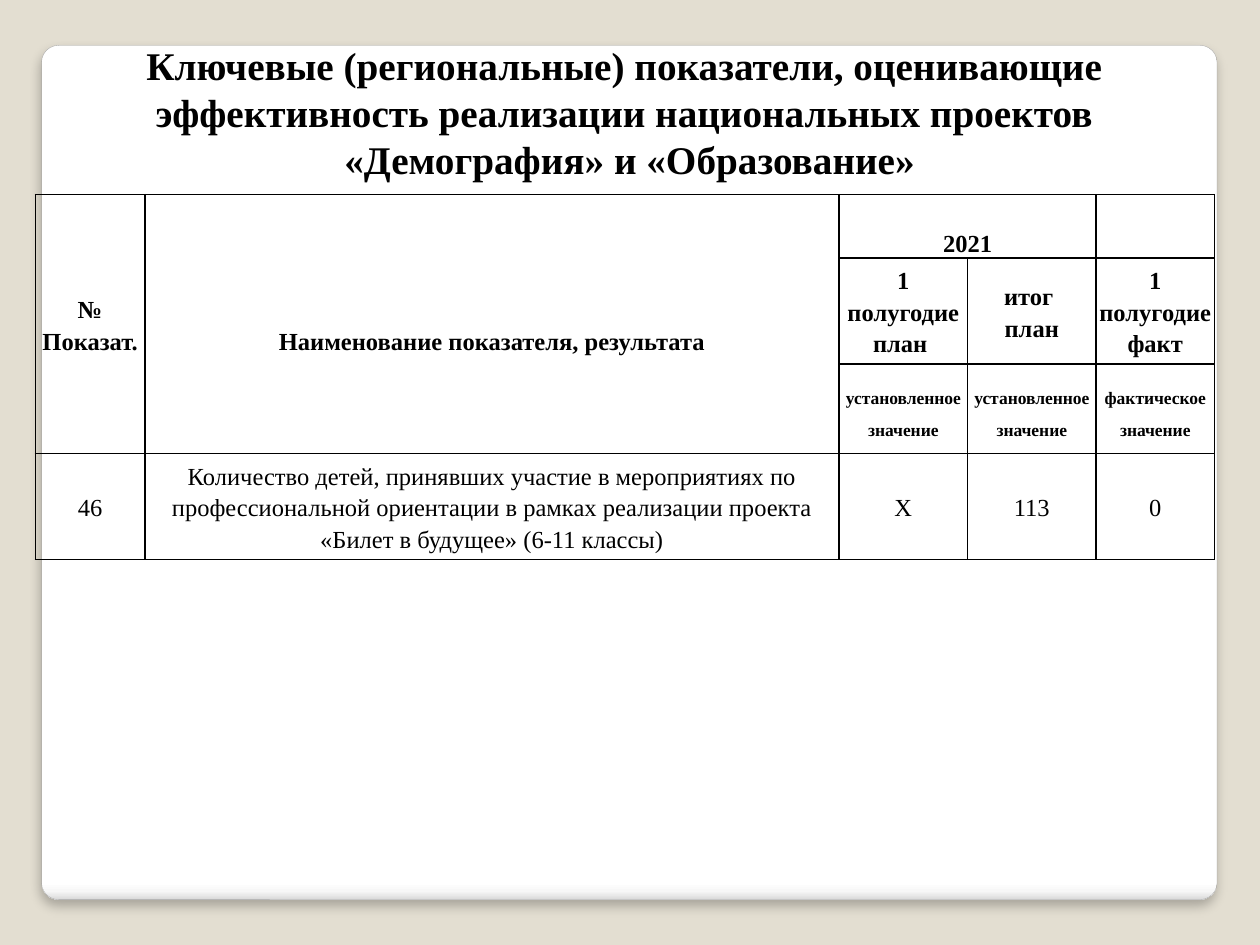
from lxml import etree
from pptx import Presentation
from pptx.dml.color import RGBColor
from pptx.enum.shapes import MSO_SHAPE
from pptx.enum.text import MSO_ANCHOR, PP_ALIGN
from pptx.oxml import parse_xml
from pptx.oxml.ns import qn
from pptx.util import Inches, Pt

ROUND = MSO_SHAPE.ROUNDED_RECTANGLE
CENTER = PP_ALIGN.CENTER
TOP, MIDDLE, BOTTOM = MSO_ANCHOR.TOP, MSO_ANCHOR.MIDDLE, MSO_ANCHOR.BOTTOM
SPACE = 'xmlns:a="http://schemas.openxmlformats.org/drawingml/2006/main"'

THEME = {
    "font": "Times New Roman",
    "back": "E3DED1",
    "ink": "000000",
    "edge": "A4A4A4",
    "fade": [(0, "FFFFFF"), (98, "FFFFFF"), (99, "F7F7F7"), (100, "DADADA")],
    "title": 22.4,
    "body": 14,
    "small": 10,
    "line": 18,
}


def add_run(para, text, size, bold):
    para.alignment = CENTER
    run = para.add_run()
    run.text = text
    run.font.name = THEME["font"]
    run.font.size = Pt(size)
    run.font.bold = bold
    run.font.color.rgb = RGBColor.from_string(THEME["ink"])


def add_edges(cell):
    props = cell._tc.get_or_add_tcPr()
    for spot, side in enumerate(("lnL", "lnR", "lnT", "lnB")):
        props.insert(spot, parse_xml(
            f'<a:{side} {SPACE} w="12700"><a:solidFill>'
            f'<a:srgbClr val="{THEME["ink"]}"/></a:solidFill></a:{side}>'))


deck = Presentation()
deck.slide_width, deck.slide_height = Inches(10), Inches(7.5)
wide, high = deck.slide_width, deck.slide_height
slide = deck.slides.add_slide(deck.slide_layouts[6])
slide.background.fill.solid()
slide.background.fill.fore_color.rgb = RGBColor.from_string(THEME["back"])

panel = slide.shapes.add_shape(
    ROUND, int(wide * 0.033), int(high * 0.048), int(wide * 0.933), int(high * 0.904))
panel.adjustments[0] = 0.02
panel.line.color.rgb = RGBColor.from_string(THEME["edge"])
panel.line.width = Pt(0.16)
stops = "".join(
    f'<a:gs pos="{spot * 1000}"><a:srgbClr val="{tone}"/></a:gs>'
    for spot, tone in THEME["fade"])
frame = panel._element.spPr
frame.find(qn("a:prstGeom")).addnext(parse_xml(
    f'<a:gradFill {SPACE}><a:gsLst>{stops}</a:gsLst>'
    '<a:lin ang="5400000" scaled="0"/></a:gradFill>'))
panel.shadow.inherit = False
shade = etree.SubElement(
    frame.find(qn("a:effectLst")), qn("a:outerShdw"),
    blurRad=str(Pt(6)), dist=str(Pt(4)), dir="5400000", algn="t", rotWithShape="0")
tint = etree.SubElement(shade, qn("a:srgbClr"), val=THEME["ink"])
etree.SubElement(tint, qn("a:alpha"), val="25000")

title = slide.shapes.add_textbox(0, 0, wide, int(high * 0.31)).text_frame
title.word_wrap = True
title.vertical_anchor = TOP
title.margin_top = int(high * 0.044)
para = title.paragraphs[0]
lines = [
    "Ключевые (региональные) показатели, оценивающие ",
    "эффективность реализации национальных проектов ",
    "«Демография» и «Образование»",
]
for spot, text in enumerate(lines):
    if spot:
        para.add_line_break()
    add_run(para, text, THEME["title"], True)

cols = [0.087, 0.551, 0.102, 0.102, 0.094]
rows = [0.067, 0.112, 0.095, 0.112]
grid = slide.shapes.add_table(
    len(rows), len(cols), int(wide * 0.028), int(high * 0.206),
    int(wide * sum(cols)), int(high * sum(rows))).table
grid.first_row = grid.horz_banding = False
for col, share in zip(grid.columns, cols):
    col.width = int(wide * share)
for row, share in zip(grid.rows, rows):
    row.height = int(high * share)

cells = [
    [["№", "Показат."], ["Наименование показателя, результата"], ["2021"], [], []],
    [[], [], ["1 полугодие план "], ["итог ", "план"], ["1 полугодие факт"]],
    [[], [], ["установленное значение"], ["установленное значение"],
     ["фактическое значение"]],
    [["46"],
     ["Количество детей, принявших участие в мероприятиях по профессиональной "
      "ориентации в рамках реализации проекта «Билет в будущее» (6-11 классы)"],
     ["X"], ["113"], ["0"]],
]
for r, row in enumerate(cells):
    for c, texts in enumerate(row):
        cell = grid.cell(r, c)
        cell.fill.background()
        add_edges(cell)
        cell.margin_left = cell.margin_right = Inches(0.02)
        cell.margin_top = cell.margin_bottom = 0
        cell.vertical_anchor = MIDDLE if r else BOTTOM
        size = THEME["small"] if r == 2 else THEME["body"]
        for spot, text in enumerate(texts):
            block = cell.text_frame
            para = block.add_paragraph() if spot else block.paragraphs[0]
            para.line_spacing = Pt(THEME["line"])
            add_run(para, text, size, r < 3)

for c in (0, 1):
    grid.cell(0, c).vertical_anchor = MIDDLE
    grid.cell(0, c).merge(grid.cell(2, c))
grid.cell(0, 1).margin_top = Pt(THEME["line"])
grid.cell(0, 2).merge(grid.cell(0, 3))

deck.save("out.pptx")
